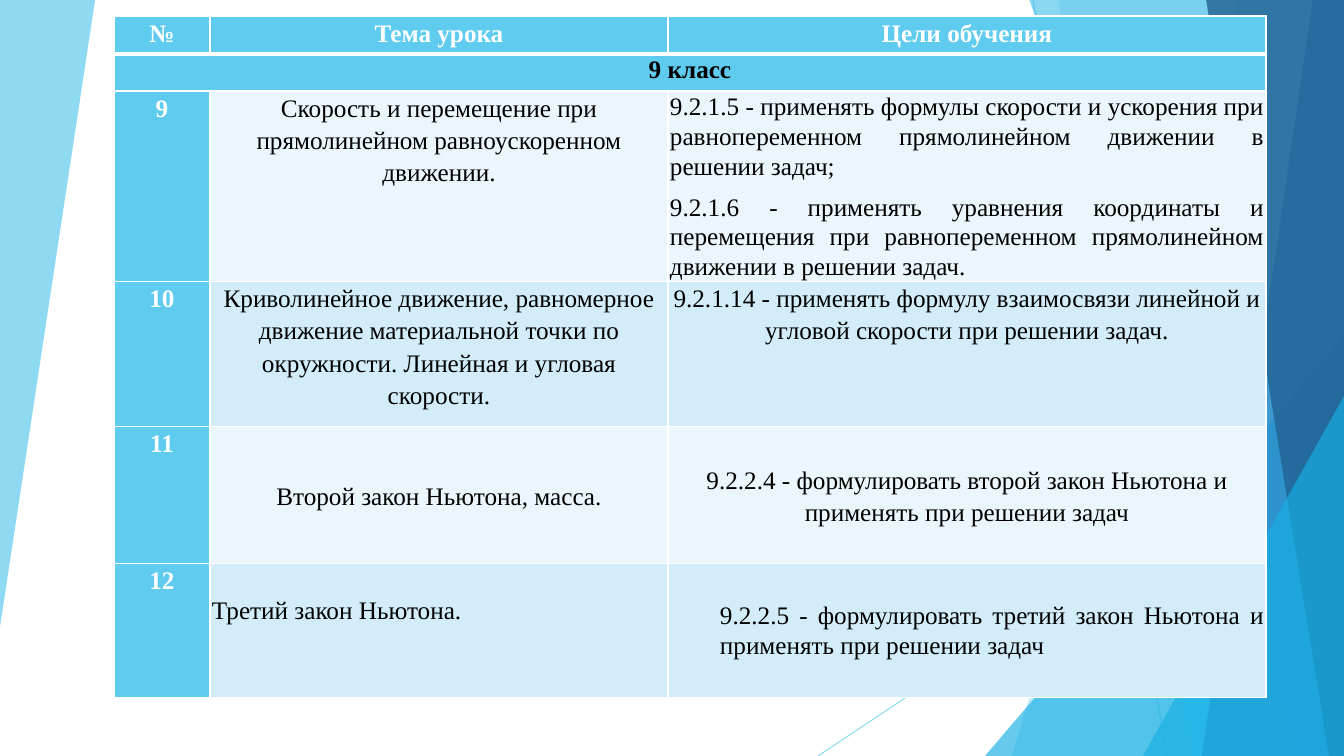
import pptx
import pptx.dml.color
import pptx.enum.shapes
import pptx.enum.text
import pptx.oxml.ns
import pptx.oxml.xmlchemy
import pptx.util
from lxml import etree

WIDE, HIGH = 1344, 756
UNIT = 914400 / 100.8
SKY, AZURE, BLUE, NAVY = "5FCBEF", "17B0E4", "2E83C3", "226292"
PALE, MIST, WHITE, BLACK = "EAF6FC", "D2ECF9", "FFFFFF", "000000"
ALIGN = pptx.enum.text.PP_ALIGN
MIDDLE = pptx.enum.text.MSO_ANCHOR.MIDDLE
qn = pptx.oxml.ns.qn


def px(count):
    return pptx.util.Emu(round(count * UNIT))


def color(code):
    return pptx.dml.color.RGBColor.from_string(code)


def fade(shape, alpha):
    """Make every colour of the shape partly transparent."""
    for tone in shape._element.spPr.iter(qn("a:srgbClr")):
        etree.SubElement(tone, qn("a:alpha")).set("val", str(alpha * 1000))


def write(part, text, font="Times New Roman", size=18, tint=BLACK, bold=False,
          align=ALIGN.CENTER, lead=1.15, indent=0):
    """Fill a paragraph with formatted text."""
    part.alignment, part.line_spacing = align, lead
    part.space_after = pptx.util.Pt(8)
    if indent:
        part._p.get_or_add_pPr().set("marL", str(px(indent)))
    run = part.add_run()
    run.text = text
    run.font.name, run.font.size = font, pptx.util.Pt(size)
    run.font.bold, run.font.color.rgb = bold, color(tint)


class Deck:
    def __init__(self):
        self.show = pptx.Presentation()
        self.show.slide_width, self.show.slide_height = px(WIDE), px(HIGH)
        self.slide = self.show.slides.add_slide(self.show.slide_layouts[6])
        self.shapes = self.slide.shapes

    def paint(self, shape, tint, alpha):
        shape.shadow.inherit = False
        shape.fill.solid()
        shape.fill.fore_color.rgb = color(tint)
        shape.line.fill.background()
        fade(shape, alpha)

    def outline(self, points, tint, alpha):
        pen = self.shapes.build_freeform(*points[0], scale=UNIT)
        pen.add_line_segments(points[1:], close=True)
        self.paint(pen.convert_to_shape(), tint, alpha)

    def band(self, top, foot, tint, alpha):
        """A slanted band that reaches the right edge of the slide."""
        self.outline([(top, -1), (WIDE, -1), (WIDE, HIGH), (foot, HIGH)], tint, alpha)

    def wedge(self, left, top):
        """A right triangle in the lower right corner."""
        kind = pptx.enum.shapes.MSO_SHAPE.ISOSCELES_TRIANGLE
        shape = self.shapes.add_shape(kind, px(left), px(top), px(WIDE - left), px(HIGH - top))
        shape.adjustments[0] = 1
        self.paint(shape, AZURE, 66)

    def line(self, *ends):
        kind = pptx.enum.shapes.MSO_CONNECTOR.STRAIGHT
        line = self.shapes.add_connector(kind, *map(px, ends))
        line.line.width = pptx.util.Pt(0.75)
        line.line.color.rgb = color(SKY)
        fade(line, 70)
        etree.SubElement(line._element.spPr, qn("a:effectLst"))

    def table(self, left, top, cols, rows):
        frame = self.shapes.add_table(len(rows), len(cols), px(left), px(top),
                                      px(sum(cols)), px(sum(rows)))
        grid = frame.table
        for col, width in zip(grid.columns, cols):
            col.width = px(width)
        for row, height in zip(grid.rows, rows):
            row.height = px(height)
        return grid

    def cell(self, cell, texts, fill, foot=1, anchor=None, under=1, **form):
        cell.margin_left = cell.margin_right = px(2)
        cell.margin_top, cell.margin_bottom = 0, (0 if foot == 1 else px(foot))
        if anchor:
            cell.vertical_anchor = anchor
        # Borders
        props = cell._tc.get_or_add_tcPr()
        for side in "LRTB":
            width = pptx.util.Pt(under if side == "B" else 1)
            edge = etree.SubElement(props, qn(f"a:ln{side}"), w=str(width))
            solid = etree.SubElement(edge, qn("a:solidFill"))
            etree.SubElement(solid, qn("a:srgbClr"), val=WHITE)
        cell.fill.solid()
        cell.fill.fore_color.rgb = color(fill)
        # Text
        frame = cell.text_frame
        for spot, text in enumerate(texts):
            write(frame.add_paragraph() if spot else frame.paragraphs[0], text, **form)


def main():
    deck = Deck()

    # Backdrop
    deck.outline([(0, 0), (95, -1), (95, 1), (0, 627)], SKY, 70)
    deck.line(1033, 0, 1167, HIGH)
    deck.line(WIDE, 406, 818, HIGH)
    deck.band(1238, 1012, SKY, 36)
    deck.band(1058, 1192, SKY, 20)
    deck.wedge(985, 336)
    deck.band(1029, 1301, AZURE, 50)
    deck.band(1313, 1202, BLUE, 70)
    deck.band(1206, 1329, NAVY, 80)
    deck.wedge(1143, 396)

    # Table head
    grid = deck.table(114, 16, [96, 458, 598], [38, 37, 190, 145, 137, 134])
    for col, text in enumerate(["№", "Тема урока", "Цели обучения"]):
        deck.cell(grid.cell(0, col), [text], SKY, under=3, tint=WHITE, bold=True)
    grid.cell(1, 0).merge(grid.cell(1, 2))
    deck.cell(grid.cell(1, 0), ["9 класс"], SKY, bold=True, lead=1.07)

    # Lessons: number, topic, goals, format of topic, format of goals
    block = dict(align=ALIGN.JUSTIFY, lead=1.07)
    mid = dict(anchor=MIDDLE)
    lessons = [
        ("9", "Скорость и перемещение при прямолинейном равноускоренном движении.",
         ["9.2.1.5 - применять формулы скорости и ускорения при равнопеременном "
          "прямолинейном движении в решении задач;",
          "9.2.1.6 - применять уравнения координаты и перемещения при "
          "равнопеременном прямолинейном движении в решении задач."], {}, block),
        ("10", "Криволинейное движение, равномерное движение материальной точки по "
         "окружности. Линейная и угловая скорости.",
         ["9.2.1.14 - применять формулу взаимосвязи линейной и угловой скорости "
          "при решении задач."], {}, {}),
        ("11", "Второй закон Ньютона, масса.",
         ["9.2.2.4 - формулировать второй закон Ньютона и применять при решении задач"],
         mid, mid),
        ("12", "Третий закон Ньютона.",
         ["9.2.2.5 - формулировать третий закон Ньютона и применять при решении задач"],
         dict(mid, align=ALIGN.LEFT, lead=1.07, foot=40), dict(mid, **block, indent=50)),
    ]
    for row, (number, topic, goals, left, right) in enumerate(lessons, 2):
        fill = MIST if row % 2 else PALE
        deck.cell(grid.cell(row, 0), [number], SKY, tint=WHITE, bold=True)
        deck.cell(grid.cell(row, 1), [topic], fill, **left)
        deck.cell(grid.cell(row, 2), goals, fill, **right)

    deck.show.save("out.pptx")


if __name__ == "__main__":
    main()
